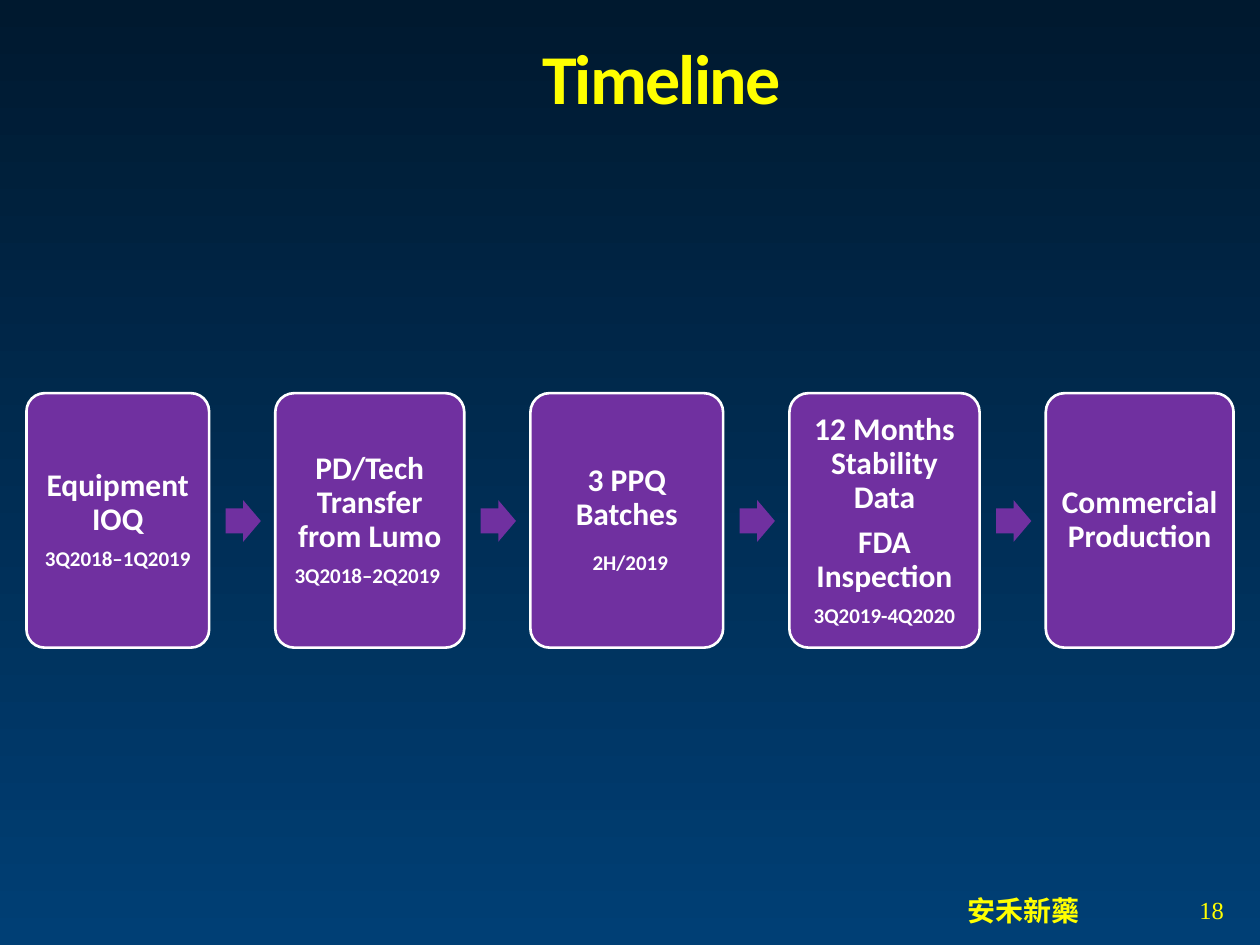
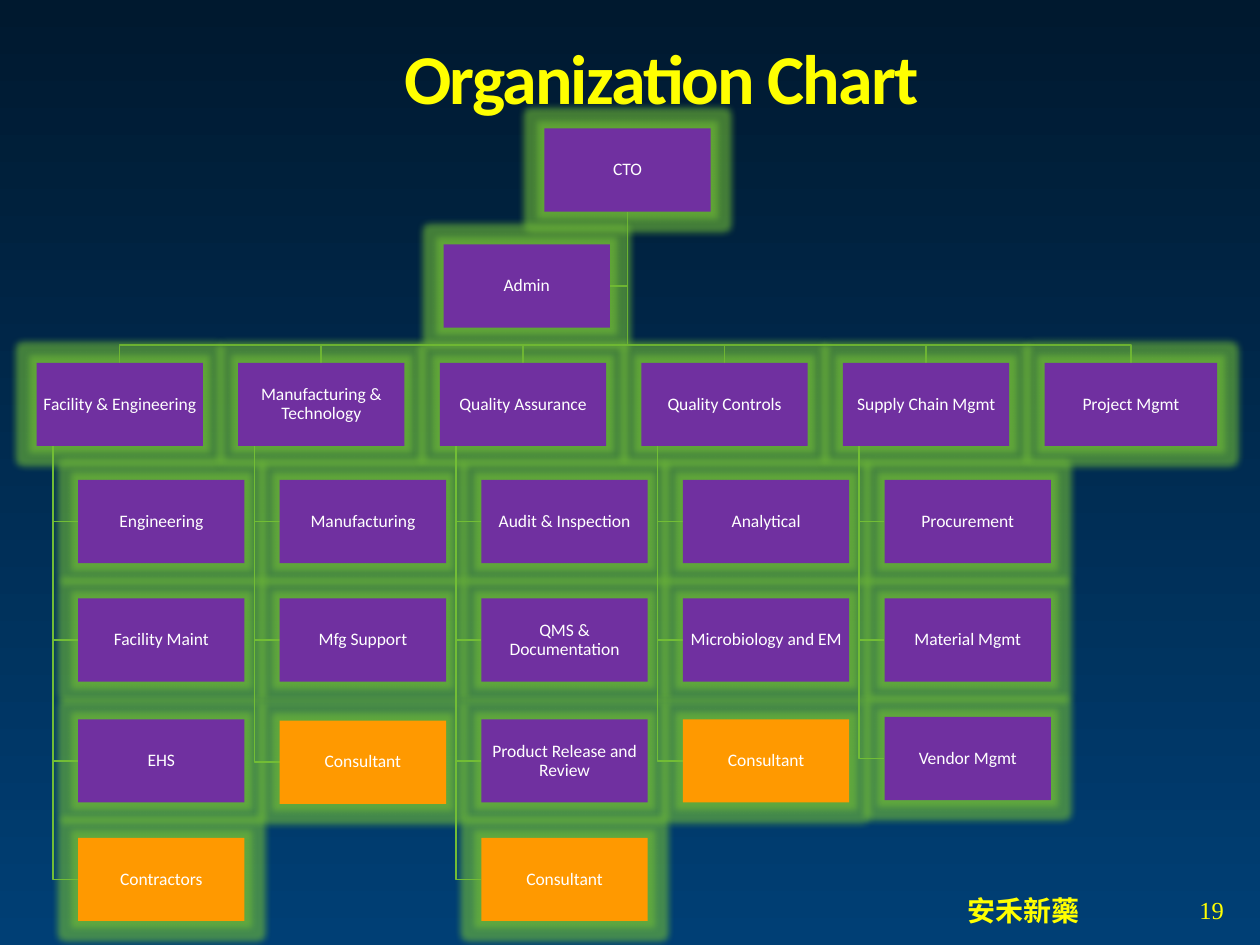
"""Build the timeline and organization chart slides."""
import pptx
import pptx.dml.color
import pptx.enum.shapes
import pptx.enum.text
import pptx.oxml
import pptx.oxml.ns
import pptx.util
from lxml import etree

Inches, Pt = pptx.util.Inches, pptx.util.Pt
RGB = pptx.dml.color.RGBColor.from_string
SHAPE = pptx.enum.shapes.MSO_SHAPE
ALIGN = pptx.enum.text.PP_ALIGN
ANCHOR = pptx.enum.text.MSO_ANCHOR
qn = pptx.oxml.ns.qn

THEME = {
    "top": "00192F", "bottom": "003F75", "accent": "FFFF00", "text": "FFFFFF",
    "box": "7030A0", "outside": "FF9900", "trunk": "66A72F", "branch": "73BE36",
    "font": "Calibri", "brand_font": "Noto Sans CJK SC", "number_font": "Times New Roman",
    "title_size": 40, "brand_size": 16, "number_size": 14,
    "step_size": 18, "date_size": 12, "org_size": 10,
}
BRAND = "安禾新藥"

BIG, SMALL = THEME["step_size"], THEME["date_size"]
STEPS = [
    (1.45, [[("Equipment IOQ", BIG)], [("3Q2018–1Q2019", SMALL)]]),
    (1.50, [[("PD/Tech Transfer from Lumo", BIG)], [("3Q2018–2Q2019 ", SMALL)]]),
    (1.53, [[("3 PPQ Batches", BIG)], [(" ", BIG), ("2H/2019", SMALL)]]),
    (1.51, [[("12 Months Stability Data", BIG)], [("FDA Inspection", BIG)],
            [("3Q2019-4Q2020", SMALL)]]),
    (1.49, [[("Commercial Production", BIG)]]),
]
STEP_LEFT, STEP_RIGHT, STEP_TOP, STEP_HEIGHT = 0.21, 9.79, 3.12, 2.02

HEAD, ASSISTANT = "CTO", "Admin"
DEPARTMENTS = [
    ("Facility & Engineering", 1.32,
     [("Engineering", "box", 0), ("Facility Maint", "box", 0), ("EHS", "box", 0),
      ("Contractors", "outside", 0)]),
    ("Manufacturing & Technology", 1.32,
     [("Manufacturing", "box", 0), ("Mfg Support", "box", 0),
      ("Consultant", "outside", 0.01)]),
    ("Quality Assurance", 1.32,
     [("Audit & Inspection", "box", 0), ("QMS & Documentation", "box", 0),
      ("Product Release and Review", "box", 0), ("Consultant", "outside", 0)]),
    ("Quality Controls", 1.32,
     [("Analytical", "box", 0), ("Microbiology and EM", "box", 0),
      ("Consultant", "outside", 0)]),
    ("Supply Chain Mgmt", 1.32,
     [("Procurement", "box", 0), ("Material Mgmt", "box", 0),
      ("Vendor Mgmt", "box", -0.02)]),
    ("Project Mgmt", 1.37, []),
]
ORG_WIDTH, ORG_HEIGHT = 1.32, 0.66
HEAD_AT, ASSISTANT_AT = (4.32, 1.02), (3.52, 1.94)
ORG_LEFT, ORG_PITCH, ORG_TOP, BUS_Y = 0.29, 1.6, 2.88, 2.74
ROW_TOPS = [3.81, 4.75, 5.71, 6.65]
RAIL, INDENT = 0.13, 0.33


def put(obj, values):
    for name, value in values.items():
        setattr(obj, name, value)


def frame(tf, inset, anchor):
    put(tf, {"word_wrap": True, "vertical_anchor": anchor})
    put(tf, dict.fromkeys(("margin_left", "margin_top", "margin_right", "margin_bottom"),
                          Inches(inset)))


def add_run(p, text, size, font, color, bold):
    r = p.add_run()
    r.text = text
    put(r.font, {"size": Pt(size), "name": font, "bold": bold})
    r.font.color.rgb = RGB(color)
    etree.SubElement(r.font._element, qn("a:ea")).set("typeface", font)
    return r


def add_box(s, kind, at, fill, lines=(), inset=0.07, bold=False, border=None):
    sp = s.shapes.add_shape(kind, *map(Inches, at))
    sp.shadow.inherit = False
    sp.fill.solid()
    sp.fill.fore_color.rgb = RGB(THEME[fill])
    if border:
        sp.line.color.rgb = RGB(THEME["text"])
        sp.line.width = Pt(border)
    else:
        sp.line.fill.background()
    tf = sp.text_frame
    frame(tf, inset, ANCHOR.MIDDLE)
    for i, line in enumerate(lines):
        p = tf.add_paragraph() if i else tf.paragraphs[0]
        put(p, {"alignment": ALIGN.CENTER, "line_spacing": 0.9,
                "space_after": Pt(0.35 * line[0][1])})
        for text, size in line:
            add_run(p, text, size, THEME["font"], THEME["text"], bold)
    return sp


def add_label(s, at, text, size, font, bold, anchor):
    tf = s.shapes.add_textbox(*map(Inches, at)).text_frame
    put(tf, {"word_wrap": True, "vertical_anchor": anchor})
    add_run(tf.paragraphs[0], text, size, font, THEME["accent"], bold)


def add_slide(prs, title, number):
    s = prs.slides.add_slide(prs.slide_layouts[5])
    sp = s.shapes.title
    put(sp, dict(zip(("left", "top", "width", "height"), map(Inches, (1, 0.2, 8.5, 0.74)))))
    frame(sp.text_frame, 0, ANCHOR.BOTTOM)
    p = sp.text_frame.paragraphs[0]
    p.alignment = ALIGN.CENTER
    r = add_run(p, title, THEME["title_size"], THEME["font"], THEME["accent"], True)
    r.font._element.set("spc", "-100")
    add_label(s, (7.58, 7.06, 1.14, 0.33), BRAND, THEME["brand_size"],
              THEME["brand_font"], True, ANCHOR.MIDDLE)
    add_label(s, (9.42, 6.99, 0.5, 0.4), str(number), THEME["number_size"],
              THEME["number_font"], False, ANCHOR.BOTTOM)
    return s


def build_timeline(s):
    widths = [width for width, _ in STEPS]
    gap = (STEP_RIGHT - STEP_LEFT - sum(widths)) / (len(STEPS) - 1)
    x = STEP_LEFT
    for i, (width, lines) in enumerate(STEPS):
        if i:
            arrow = add_box(s, SHAPE.RIGHT_ARROW, (x - gap + 0.13, 3.97, 0.28, 0.33), "box")
            arrow.adjustments[0] = 0.6
        sp = add_box(s, SHAPE.ROUNDED_RECTANGLE, (x, STEP_TOP, width, STEP_HEIGHT),
                     "box", lines, bold=True, border=1.5)
        sp.adjustments[0] = 0.1
        x += width + gap


def add_path(s, points, color):
    points = [(Inches(x), Inches(y)) for x, y in points]
    fb = s.shapes.build_freeform(*points[0])
    fb.add_line_segments(points[1:], close=False)
    sp = fb.convert_to_shape()
    sp.shadow.inherit = False
    sp.fill.background()
    sp.line.color.rgb = RGB(THEME[color])
    sp.line.width = Pt(0.94)


def add_unit(s, name, x, y, fill="box", width=ORG_WIDTH):
    sp = add_box(s, SHAPE.RECTANGLE, (x, y, width, ORG_HEIGHT), fill,
                 [[(name, THEME["org_size"])]], inset=0.01)
    effects = sp._element.spPr.find(qn("a:effectLst"))
    glow = etree.SubElement(effects, qn("a:glow"), rad=str(Pt(8)))
    color = etree.SubElement(glow, qn("a:srgbClr"), val=THEME["branch"])
    etree.SubElement(color, qn("a:alpha"), val="60000")


def build_org_chart(s):
    trunk, head_bottom = HEAD_AT[0] + ORG_WIDTH / 2, HEAD_AT[1] + ORG_HEIGHT
    assistant_y = ASSISTANT_AT[1] + ORG_HEIGHT / 2
    add_path(s, [(trunk, head_bottom), (trunk, assistant_y),
                 (ASSISTANT_AT[0] + ORG_WIDTH, assistant_y)], "trunk")
    units = [(HEAD, *HEAD_AT), (ASSISTANT, *ASSISTANT_AT)]
    for i, (name, width, members) in enumerate(DEPARTMENTS):
        x = ORG_LEFT + i * ORG_PITCH
        center = x + width / 2
        add_path(s, [(trunk, head_bottom), (trunk, BUS_Y), (center, BUS_Y),
                     (center, ORG_TOP)], "trunk")
        units.append((name, x, ORG_TOP, "box", width))
        for (member, fill, nudge), top in zip(members, ROW_TOPS):
            y = top + nudge
            middle = y + ORG_HEIGHT / 2
            add_path(s, [(x + RAIL, ORG_TOP + ORG_HEIGHT), (x + RAIL, middle),
                         (x + INDENT, middle)], "branch")
            units.append((member, x + INDENT, y, fill))
    for unit in units:
        add_unit(s, *unit)


def main():
    prs = pptx.Presentation()
    put(prs, {"slide_width": Inches(10), "slide_height": Inches(7.5)})
    fill = prs.slide_master.background.fill
    fill.gradient()
    fill.gradient_angle = 270
    for stop, position, color in zip(fill.gradient_stops, (0, 1), ("top", "bottom")):
        stop.position = position
        stop.color.rgb = RGB(THEME[color])
    build_timeline(add_slide(prs, "Timeline", 18))
    build_org_chart(add_slide(prs, "Organization Chart", 19))
    prs.save("out.pptx")


if __name__ == "__main__":
    main()
